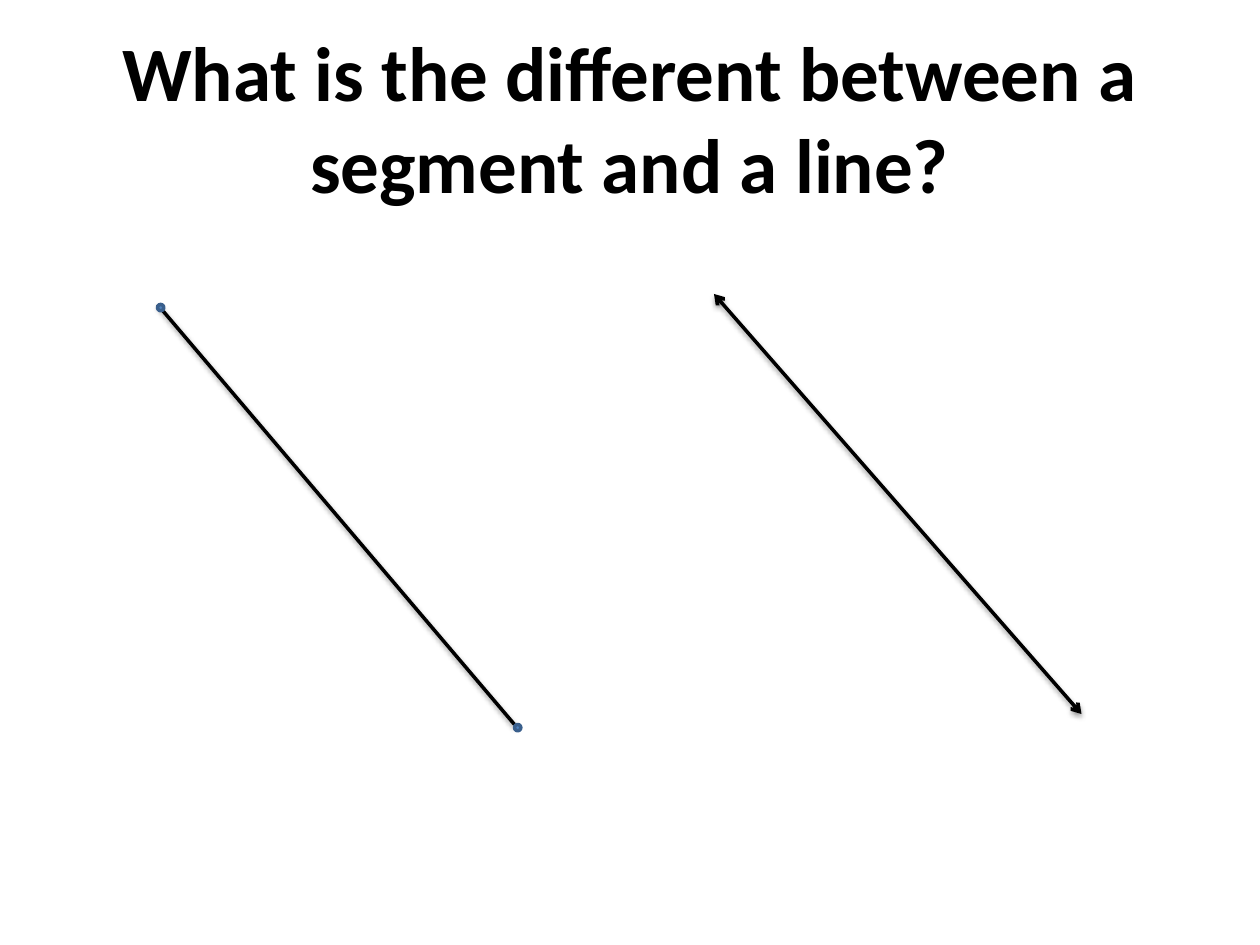
from typing import NamedTuple

from lxml import etree
from pptx import Presentation
from pptx import util as u
from pptx.dml.color import RGBColor
from pptx.enum import shapes, text
from pptx.oxml import parse_xml
from pptx.oxml.ns import nsdecls, qn

COLS, ROWS = 120, 90
COLORS = {"ink": "000000", "dot": "4F81BD", "dot_edge": "3A5F8C"}
DOT = u.Inches(0.05)
LINE_WIDTH = u.Pt(2)

prs = Presentation()
prs.slide_width, prs.slide_height = u.Inches(10), u.Inches(7.5)
CELL = prs.slide_width // COLS


class Point(NamedTuple):
    col: float
    row: float


class Stroke(NamedTuple):
    start: Point
    end: Point
    arrows: bool


SEGMENT = Stroke(Point(15, 29), Point(49, 69), arrows=False)
LINE = Stroke(Point(68, 28), Point(103, 68), arrows=True)


def cells(*counts: float) -> list[int]:
    return [u.Emu(round(n * CELL)) for n in counts]


def rgb(name: str) -> RGBColor:
    return RGBColor.from_string(COLORS[name])


def add_title(s, wording: str) -> None:
    tf = s.shapes.add_textbox(*cells(6, 3.6, 108, 15)).text_frame
    tf.word_wrap = True
    tf.vertical_anchor = text.MSO_ANCHOR.MIDDLE
    p = tf.paragraphs[0]
    p.text = wording
    p.alignment = text.PP_ALIGN.CENTER
    p.font.name, p.font.size, p.font.bold = "Calibri", u.Pt(44), True
    p.font.color.rgb = rgb("ink")


def add_stroke(s, stroke: Stroke) -> None:
    """Draw a softly shadowed line, with arrowheads at both ends if asked."""
    cx = s.shapes.add_connector(shapes.MSO_CONNECTOR.STRAIGHT,
                                *cells(*stroke.start, *stroke.end))
    cx.line.width = LINE_WIDTH
    cx.line.color.rgb = rgb("ink")
    if stroke.arrows:
        ln = cx.line._get_or_add_ln()
        for tag in ("a:headEnd", "a:tailEnd"):
            etree.SubElement(ln, qn(tag), type="arrow")
    cx._element.spPr.append(parse_xml(
        f'<a:effectLst {nsdecls("a")}>'
        '<a:outerShdw blurRad="40000" dist="20000" dir="5400000" rotWithShape="0">'
        f'<a:srgbClr val="{COLORS["ink"]}"><a:alpha val="38000"/></a:srgbClr>'
        '</a:outerShdw></a:effectLst>'))


def add_dot(s, point: Point) -> None:
    sp = s.shapes.add_shape(shapes.MSO_SHAPE.OVAL, *cells(*point), DOT, DOT)
    sp.shadow.inherit = False
    sp.fill.solid()
    sp.fill.fore_color.rgb = rgb("dot")
    sp.line.width = LINE_WIDTH
    sp.line.color.rgb = rgb("dot_edge")


def main() -> None:
    s = prs.slides.add_slide(prs.slide_layouts[6])
    add_title(s, "What is the different between a segment and a line?")
    for stroke in (SEGMENT, LINE):
        add_stroke(s, stroke)
    for point in (SEGMENT.start, SEGMENT.end):
        add_dot(s, point)
    prs.save("out.pptx")


if __name__ == "__main__":
    main()
